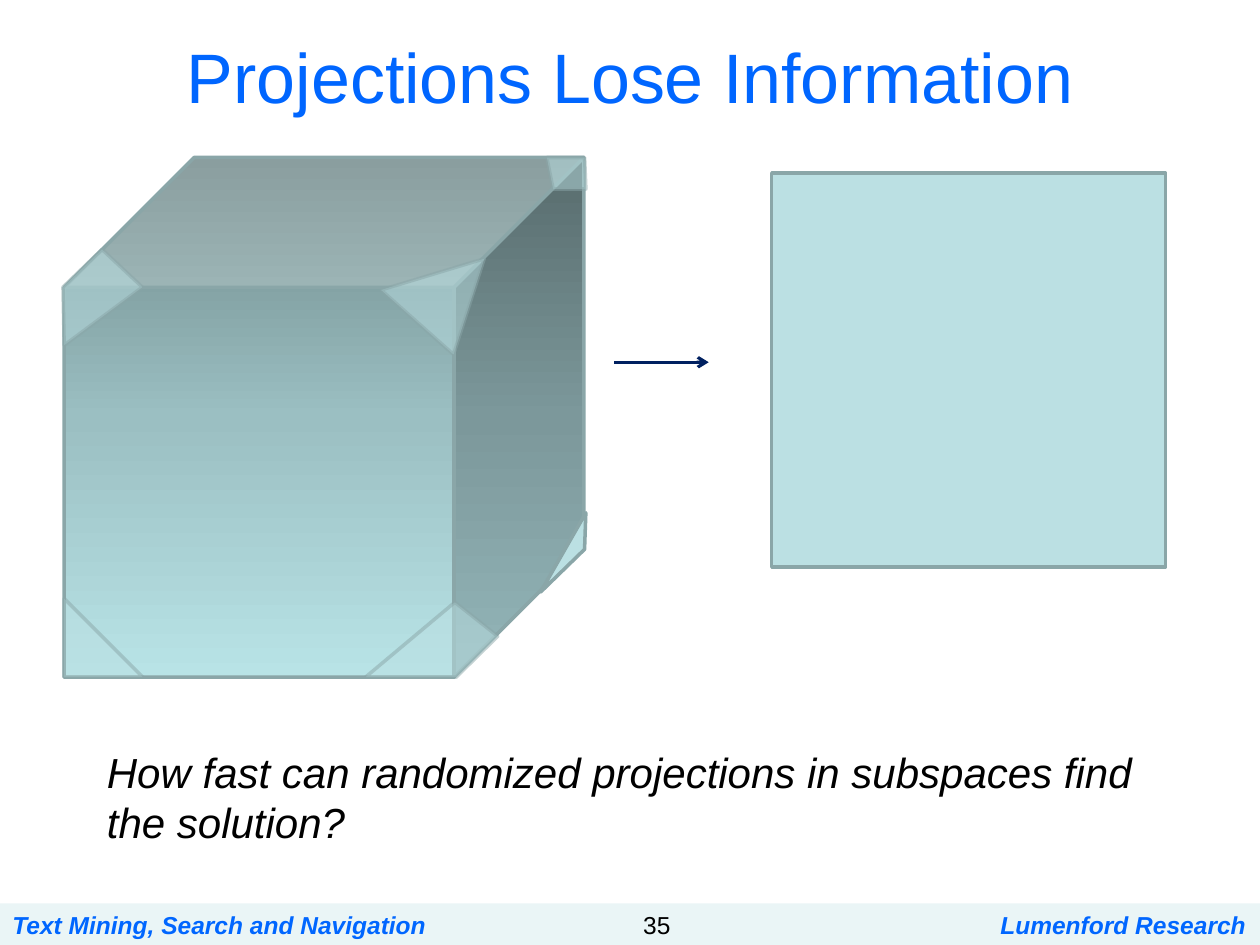
from copy import deepcopy
from dataclasses import dataclass

from lxml import etree
from pptx import Presentation
from pptx import util as u
from pptx.dml.color import RGBColor
from pptx.enum import shapes, text
from pptx.oxml import ns


@dataclass(frozen=True)
class Theme:
    font: str = "Arial"
    accent: str = "0066FF"
    ink: str = "000000"
    pale: str = "BBE0E3"
    edge: str = "8AA6A8"
    arrow: str = "002060"
    shading: tuple = ((0, "6D8688"), (0.5, "9BBFC2"), (1, "B8E3E6"))
    title: int = 40
    body: int = 24
    footer: int = 14
    outline: float = 2
    arrow_width: float = 1.75


class Board:
    COLUMNS, ROWS = 80, 60

    def __init__(self, deck, theme):
        self.theme = theme
        self.slide = deck.slides.add_slide(deck.slide_layouts[6])
        self.column = deck.slide_width / self.COLUMNS
        self.row = deck.slide_height / self.ROWS

    def point(self, x, y):
        return u.Emu(round(x * self.column)), u.Emu(round(y * self.row))

    def fade(self, paint, opacity):
        if opacity < 100:
            color = next(paint.iter(ns.qn("a:srgbClr")))
            etree.SubElement(color, ns.qn("a:alpha"), val=str(opacity * 1000))

    def style(self, shape, opacity=100, outlined=True):
        shape.shadow.inherit = False
        shape.fill.solid()
        shape.fill.fore_color.rgb = RGBColor.from_string(self.theme.pale)
        properties = shape._element.spPr
        self.fade(properties.find(ns.qn("a:solidFill")), opacity)
        if outlined:
            shape.line.color.rgb = RGBColor.from_string(self.theme.edge)
            shape.line.width = u.Pt(self.theme.outline)
            self.fade(properties.find(ns.qn("a:ln")), opacity)
        else:
            shape.line.fill.background()
        return shape

    def preset(self, kind, x, y, w, h, opacity=100, outlined=True):
        shape = self.slide.shapes.add_shape(kind, *self.point(x, y), *self.point(w, h))
        return self.style(shape, opacity, outlined)

    def shade(self, shape):
        shape.fill.gradient()
        shape.fill.gradient_angle = 270
        stops = shape._element.spPr.find(ns.qn("a:gradFill")).find(ns.qn("a:gsLst"))
        stops.insert(1, deepcopy(stops[0]))
        for stop, (position, color) in zip(shape.fill.gradient_stops, self.theme.shading):
            stop.position = position
            stop.color.rgb = RGBColor.from_string(color)

    def polygon(self, corners, opacity=100):
        start, *others = [self.point(*corner) for corner in corners]
        builder = self.slide.shapes.build_freeform(*start)
        builder.add_line_segments(others, close=True)
        return self.style(builder.convert_to_shape(), opacity)

    def arrow(self, start, end):
        line = self.slide.shapes.add_connector(
            shapes.MSO_CONNECTOR.STRAIGHT, *self.point(*start), *self.point(*end))
        line.line.color.rgb = RGBColor.from_string(self.theme.arrow)
        line.line.width = u.Pt(self.theme.arrow_width)
        properties = line._element.spPr
        etree.SubElement(properties.find(ns.qn("a:ln")), ns.qn("a:tailEnd"), type="arrow")
        etree.SubElement(properties, ns.qn("a:effectLst"))

    def label(self, words, x, y, w, h, size, color, align=text.PP_ALIGN.LEFT,
              bold=False, italic=False, anchor=text.MSO_ANCHOR.TOP):
        frame = self.slide.shapes.add_textbox(*self.point(x, y), *self.point(w, h)).text_frame
        frame.word_wrap = True
        frame.vertical_anchor = anchor
        paragraph = frame.paragraphs[0]
        paragraph.text = words
        paragraph.alignment = align
        font = paragraph.font
        font.name, font.size = self.theme.font, u.Pt(size)
        font.bold, font.italic = bold, italic
        font.color.rgb = RGBColor.from_string(color)


def main():
    deck = Presentation()
    deck.slide_width, deck.slide_height = u.Inches(10), u.Inches(7.5)
    theme = Theme()
    board = Board(deck, theme)
    kinds = shapes.MSO_SHAPE
    footer_top, footer_height = 57.36, 2.64

    board.preset(kinds.RECTANGLE, 0, footer_top, 80, footer_height, 30, outlined=False)
    board.label("Projections Lose Information", 4, 2, 72, 5.6, theme.title, theme.accent,
                text.PP_ALIGN.CENTER, anchor=text.MSO_ANCHOR.MIDDLE)

    cube = board.preset(kinds.CUBE, 4.08, 10, 33, 33)
    board.shade(cube)
    front_corner = board.preset(kinds.ISOSCELES_TRIANGLE, 25.36, 15.36, 6.16, 5.84, 50)
    front_corner.adjustments[0] = 0.58
    front_corner.rotation = 41.7
    cut_corners = (
        (((4.08, 21.92), (4, 18.24), (6.48, 15.84), (9.04, 18.24)), 50),
        (((23.2, 43), (28.88, 38.24), (31.6, 40.4), (28.96, 43)), 50),
        (((34.32, 37.6), (37.2, 32.56), (37.12, 34.88)), 100),
        (((35.12, 12), (34.72, 10), (37.12, 10), (37.2, 12)), 50),
    )
    for corners, opacity in cut_corners:
        board.polygon(corners, opacity)
    board.preset(kinds.RIGHT_TRIANGLE, 4.08, 38, 5, 5, 50)

    board.preset(kinds.RECTANGLE, 49, 11, 25, 25)
    board.arrow((39, 23), (45, 23))
    board.label("How fast can randomized projections in subspaces find the solution?",
                6, 47, 67, 7.28, theme.body, theme.ink, italic=True)

    footers = (
        ("Text Mining, Search and Navigation", 0, 28, theme.accent, text.PP_ALIGN.LEFT, True),
        ("35", 38, 5.36, theme.ink, text.PP_ALIGN.RIGHT, False),
        ("Lumenford Research", 62.64, 17.36, theme.accent, text.PP_ALIGN.CENTER, True),
    )
    for words, x, width, color, align, strong in footers:
        board.label(words, x, footer_top, width, footer_height, theme.footer, color,
                    align, bold=strong, italic=strong)

    deck.save("out.pptx")


if __name__ == "__main__":
    main()
